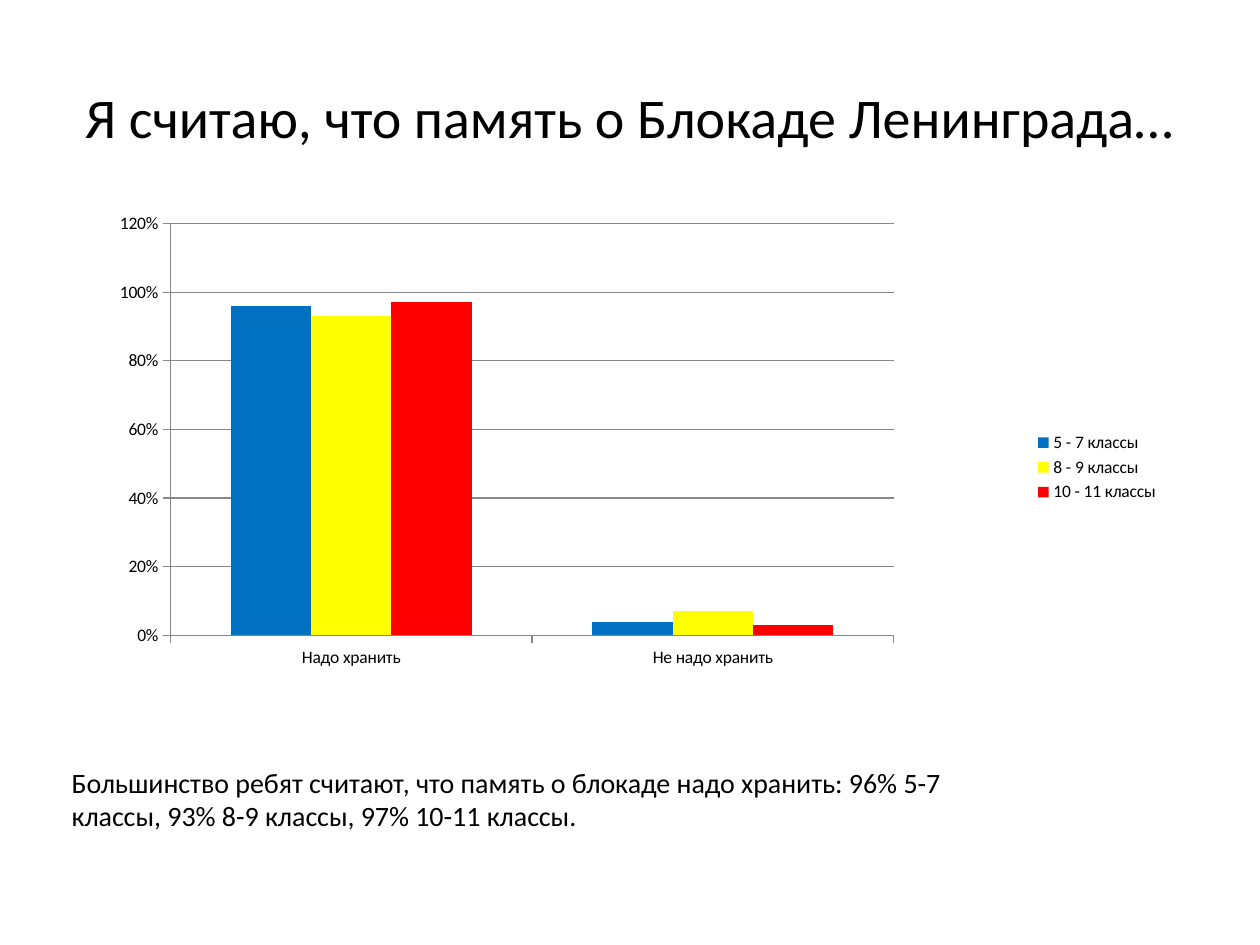
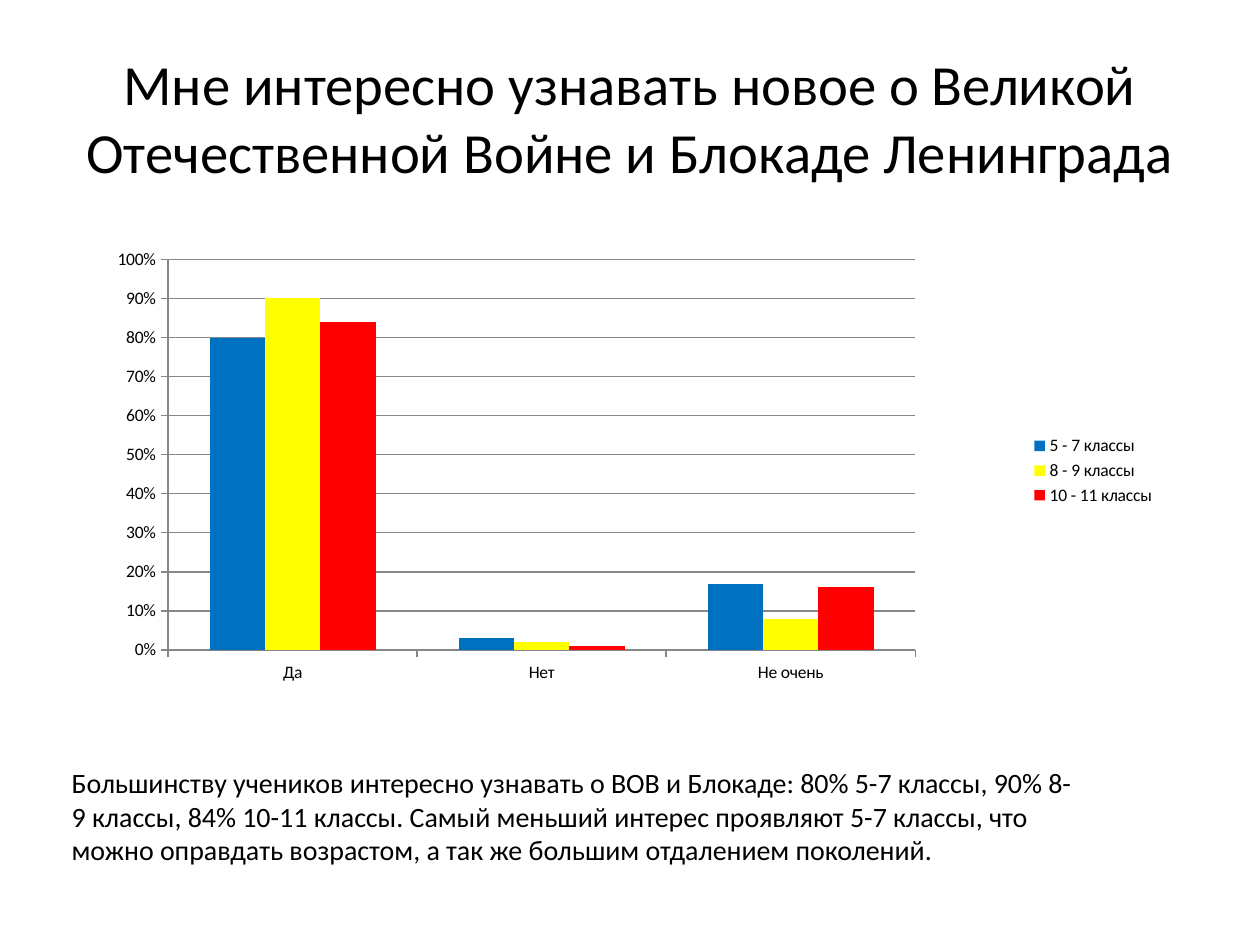
import pptx
import pptx.chart.data
import pptx.dml.color
import pptx.enum.chart
import pptx.enum.text
import pptx.oxml
import pptx.oxml.ns
import pptx.util

Inches = pptx.util.Inches
Pt = pptx.util.Pt
RGBColor = pptx.dml.color.RGBColor

BLACK = RGBColor(0x00, 0x00, 0x00)
GRAY = RGBColor(0x86, 0x86, 0x86)
BLUE = RGBColor(0x00, 0x70, 0xC0)
YELLOW = RGBColor(0xFF, 0xFF, 0x00)
RED = RGBColor(0xFF, 0x00, 0x00)

FONT = "Calibri"
GRADES = (("5 - 7 классы", BLUE), ("8 - 9 классы", YELLOW), ("10 - 11 классы", RED))


class Deck:
    """Holds the shared style and the current slide."""

    def __init__(self):
        self.prs = pptx.Presentation()
        self.prs.slide_width = Inches(10)
        self.prs.slide_height = Inches(7.5)
        self.slide = None

    def style(self, font, size):
        font.name = FONT
        font.size = Pt(size)
        font.color.rgb = BLACK

    def put_text(self, frame, text, size, align):
        frame.word_wrap = True
        frame.vertical_anchor = pptx.enum.text.MSO_ANCHOR.MIDDLE
        para = frame.paragraphs[0]
        para.alignment = align
        run = para.add_run()
        run.text = text
        self.style(run.font, size)

    def title(self, text, size):
        """Start a slide with its title."""
        self.slide = self.prs.slides.add_slide(self.prs.slide_layouts[5])
        shape = self.slide.shapes.title
        shape.left, shape.top = Inches(0.5), Inches(0.3)
        shape.width, shape.height = Inches(9), Inches(1.25)
        shape.text_frame.auto_size = pptx.enum.text.MSO_AUTO_SIZE.NONE
        self.put_text(shape.text_frame, text, size, pptx.enum.text.PP_ALIGN.CENTER)

    def note(self, text, width, height):
        """Add the conclusion under the chart."""
        box = self.slide.shapes.add_textbox(
            Inches(0.47), Inches(6.02), Inches(width), Inches(height))
        box.text_frame.auto_size = pptx.enum.text.MSO_AUTO_SIZE.SHAPE_TO_FIT_TEXT
        self.put_text(box.text_frame, text, 16, pptx.enum.text.PP_ALIGN.LEFT)

    def chart(self, place, cats, rows, plot, top, step):
        """Add a column chart with one series for each group of grades."""
        data = pptx.chart.data.CategoryChartData(number_format="0%")
        data.categories = cats
        for (name, _), row in zip(GRADES, rows):
            data.add_series(name, row)
        chart = self.slide.shapes.add_chart(
            pptx.enum.chart.XL_CHART_TYPE.COLUMN_CLUSTERED,
            *map(Inches, place), data).chart
        self.style(chart.font, 10)
        chart.has_title = False

        # Columns
        bars = chart.plots[0]
        bars.vary_by_categories = False
        bars.gap_width = 150
        bars.overlap = 0
        for series, (_, color) in zip(bars.series, GRADES):
            series.format.fill.solid()
            series.format.fill.fore_color.rgb = color

        # Axes and grid
        scale = chart.value_axis
        scale.minimum_scale, scale.maximum_scale = 0, top
        scale.major_unit = step
        scale.has_major_gridlines = True
        scale.tick_labels.number_format = "0%"
        scale.tick_labels.number_format_is_linked = False
        for part in (scale, scale.major_gridlines, chart.category_axis):
            part.format.line.color.rgb = GRAY
            part.format.line.width = Pt(0.75)
        for axis in (scale, chart.category_axis):
            axis.major_tick_mark = pptx.enum.chart.XL_TICK_MARK.OUTSIDE

        # Legend
        chart.has_legend = True
        chart.legend.position = pptx.enum.chart.XL_LEGEND_POSITION.RIGHT
        chart.legend.include_in_layout = False
        self.style(chart.legend.font, 10)
        self.fix(chart, plot)

    def fix(self, chart, plot):
        """Pin the inner plot area, given in fractions of the chart."""
        area = chart.plots[0]._element.getparent()
        for old in area.findall(pptx.oxml.ns.qn("c:layout")):
            area.remove(old)
        modes = '<c:xMode val="edge"/><c:yMode val="edge"/>'
        sizes = "".join(f'<c:{key} val="{val}"/>' for key, val in zip("xywh", plot))
        area.insert(0, pptx.oxml.parse_xml(
            f'<c:layout {pptx.oxml.ns.nsdecls("c")}><c:manualLayout>'
            f'<c:layoutTarget val="inner"/>{modes}{sizes}'
            '</c:manualLayout></c:layout>'))


def main():
    deck = Deck()

    # Keeping the memory
    deck.title("Я считаю, что память о Блокаде Ленинграда…", 32)
    deck.chart(
        (0.47, 1.56, 8.83, 4.3),
        ("Надо хранить", "Не надо хранить"),
        ((0.96, 0.04), (0.93, 0.07), (0.97, 0.03)),
        (0.1, 0.05, 0.65, 0.76), 1.2, 0.2)
    deck.note(
        "Большинство ребят считают, что память о блокаде надо хранить: "
        "96% 5-7 классы, 93% 8-9 классы, 97% 10-11 классы.", 7.5, 0.64)

    # Interest in history
    deck.title("Мне интересно узнавать новое о Великой Отечественной Войне "
               "и Блокаде Ленинграда", 32.4)
    deck.chart(
        (0.55, 1.64, 8.72, 4.19),
        ("Да", "Нет", "Не очень"),
        ((0.8, 0.03, 0.17), (0.9, 0.02, 0.08), (0.84, 0.01, 0.16)),
        (0.09, 0.1, 0.68, 0.74), 1, 0.1)
    deck.note(
        "Большинству учеников интересно узнавать о ВОВ и Блокаде: "
        "80% 5-7 классы, 90% 8-9 классы, 84% 10-11 классы. "
        "Самый меньший интерес проявляют 5-7 классы, что можно оправдать "
        "возрастом, а так же большим отдалением поколений.", 8.2, 0.91)

    deck.prs.save("out.pptx")


if __name__ == "__main__":
    main()
